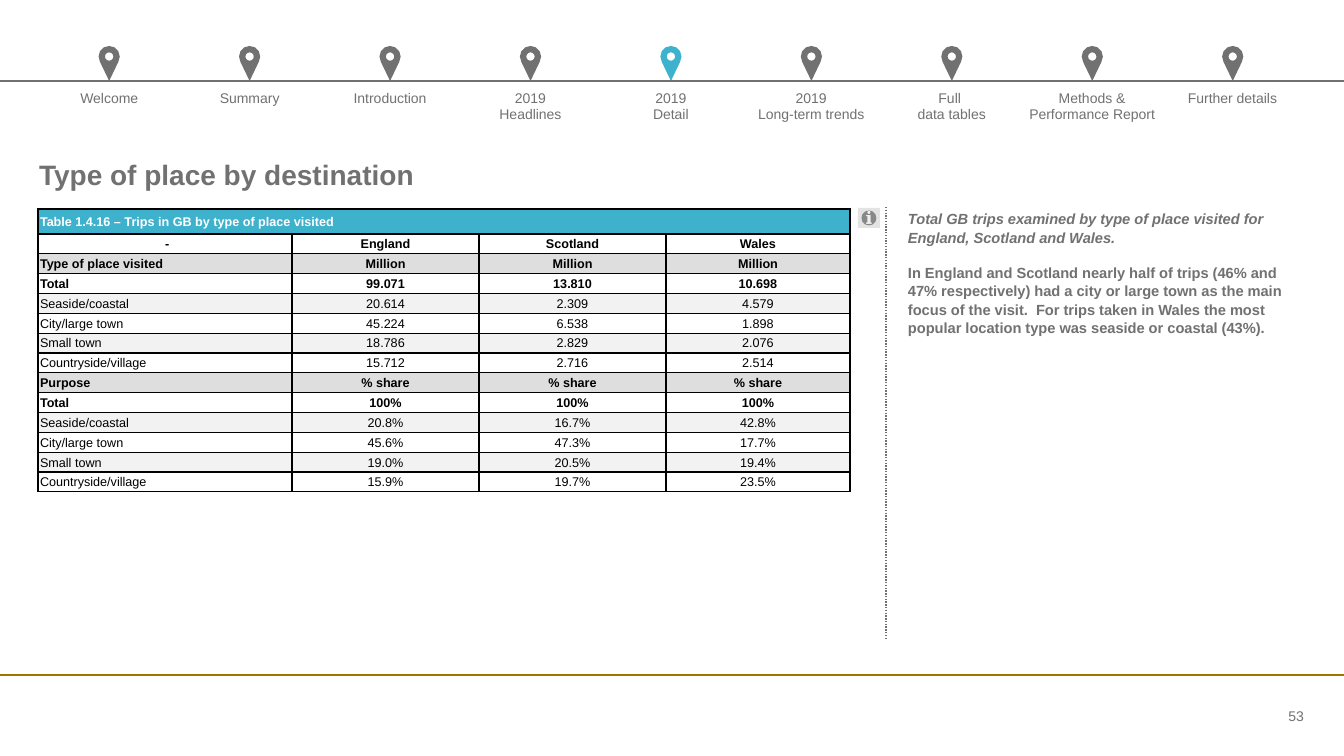
from math import cos, radians, sin

from lxml.etree import SubElement
from pptx import Presentation
from pptx.dml.color import RGBColor
from pptx.enum.dml import MSO_LINE
from pptx.enum.shapes import MSO_CONNECTOR, MSO_SHAPE
from pptx.enum.text import MSO_ANCHOR as ANCHOR, PP_ALIGN as ALIGN
from pptx.oxml.ns import qn
from pptx.util import Emu, Pt

PX_PER_INCH = 100.8
FONT = "Arial"
NO_GRID_STYLE = "{2D5ABB26-0587-4C30-8999-92F81FD0307C}"
GREY = RGBColor(0x71, 0x71, 0x71)
TEAL = RGBColor(0x3E, 0xB1, 0xCC)
GOLD = RGBColor(0x9E, 0x75, 0x00)
BLACK = RGBColor(0x00, 0x00, 0x00)
WHITE = RGBColor(0xFF, 0xFF, 0xFF)
HEADING_FILL = RGBColor(0xDE, 0xDE, 0xDE)
BAND_FILL = RGBColor(0xF2, 0xF2, 0xF2)
BUTTON_FILL = RGBColor(0xE3, 0xE3, 0xE3)

SECTIONS = ["Welcome", "Summary", "Introduction", "2019\nHeadlines", "2019\nDetail",
            "2019\nLong-term trends", "Full \vdata tables",
            "Methods & Performance Report", "Further details"]
CURRENT_SECTION = 4

TABLE_TITLE = "Table 1.4.16 – Trips in GB by type of place visited"
TABLE_ROWS = [
    (" -", "England", "Scotland", "Wales"),
    ("Type of place visited", "Million", "Million", "Million"),
    ("Total", "99.071", "13.810", "10.698"),
    ("Seaside/coastal", "20.614", "2.309", "4.579"),
    ("City/large town", "45.224", "6.538", "1.898"),
    ("Small town", "18.786", "2.829", "2.076"),
    ("Countryside/village", "15.712", "2.716", "2.514"),
    ("Purpose", "% share", "% share", "% share"),
    ("Total", "100%", "100%", "100%"),
    ("Seaside/coastal", "20.8%", "16.7%", "42.8%"),
    ("City/large town", "45.6%", "47.3%", "17.7%"),
    ("Small town", "19.0%", "20.5%", "19.4%"),
    ("Countryside/village", "15.9%", "19.7%", "23.5%"),
]
HEADINGS = {"Type of place visited", "Purpose"}
BANDED = {"Seaside/coastal", "Small town"}
BOLD = HEADINGS | {"Total", TABLE_ROWS[0][0]}

COMMENTARY = [
    "Total GB trips examined by type of place visited for England, Scotland and Wales.",
    "In England and Scotland nearly half of trips (46% and 47% respectively) had a city or "
    "large town as the main focus of the visit.  For trips taken in Wales the most popular "
    "location type was seaside or coastal (43%).",
]


def px(length):
    """Turn a length in px into EMU."""
    return Emu(round(length * 914400 / PX_PER_INCH))


def format_text(text_frame, size, color, bold=False, align=ALIGN.LEFT):
    """Format every run in a text frame."""
    for paragraph in text_frame.paragraphs:
        paragraph.alignment = align
        for run in paragraph.runs:
            run.font.name, run.font.size = FONT, Pt(size)
            run.font.bold, run.font.color.rgb = bold, color


def clear_margins(text_frame, anchor):
    """Wrap the text, remove its margins and anchor it."""
    text_frame.word_wrap = True
    text_frame.margin_left = text_frame.margin_right = 0
    text_frame.margin_top = text_frame.margin_bottom = 0
    text_frame.vertical_anchor = anchor


def add_line(slide, start, end, color, width, dash=None):
    """Draw a straight line between two points."""
    line = slide.shapes.add_connector(MSO_CONNECTOR.STRAIGHT, *map(px, start + end))
    line.line.color.rgb, line.line.width = color, Pt(width)
    if dash:
        line.line.dash_style = dash
    SubElement(line._element.spPr, qn("a:effectLst"))


def arc(center_x, center_y, radius, first, last):
    """List the points of an arc in EMU, with angles in degrees."""
    return [(px(center_x + radius * cos(radians(angle))),
             px(center_y + radius * sin(radians(angle))))
            for angle in range(first, last + 1, 30)]


def add_pin(slide, center_x, top, color):
    """Draw a map pin with a round hole."""
    outline = arc(center_x, top + 10.6, 10.6, -210, 30) + [(px(center_x), px(top + 35))]
    hole = arc(center_x, top + 10.6, 4.2, 0, 330)
    builder = slide.shapes.build_freeform(*outline[0])
    builder.add_line_segments(outline[1:])
    builder.move_to(*hole[0])
    builder.add_line_segments(hole[1:])
    pin = builder.convert_to_shape()
    pin.shadow.inherit = False
    pin.fill.solid()
    pin.fill.fore_color.rgb = color
    pin.line.fill.background()


def add_plain_table(slide, rows, columns, box):
    """Add a table without banding, a header row or a grid."""
    table = slide.shapes.add_table(rows, columns, *map(px, box)).table
    table.first_row = table.horz_banding = False
    table._tbl.tblPr.find(qn("a:tableStyleId")).text = NO_GRID_STYLE
    return table


def format_cell(cell, fill, margin):
    """Set the fill and margins of a cell."""
    if fill is None:
        cell.fill.background()
    else:
        cell.fill.solid()
        cell.fill.fore_color.rgb = fill
    cell.margin_left, cell.margin_right, cell.margin_top = map(px, margin)
    cell.margin_bottom = 0


def add_borders(cell, sides):
    """Draw a thin black line on the given sides of a cell."""
    properties = cell._tc.get_or_add_tcPr()
    for side in sides:
        line = SubElement(properties, qn(f"a:{side}"), w=str(Pt(1)))
        SubElement(SubElement(line, qn("a:solidFill")), qn("a:srgbClr"), val=str(BLACK))


def add_navigation(slide, left, top, width, height):
    """Draw the timeline of sections with pins and labels."""
    step = width / len(SECTIONS)
    labels = add_plain_table(slide, 1, len(SECTIONS), (left, top + 45, width, height - 45))
    for index, section in enumerate(SECTIONS):
        labels.columns[index].width = px(step)
        cell = labels.cell(0, index)
        format_cell(cell, None, (0, 0, 0))
        cell.text_frame.text = section
        format_text(cell.text_frame, 10, GREY, align=ALIGN.CENTER)
        color = TEAL if index == CURRENT_SECTION else GREY
        add_pin(slide, left + step * (index + 0.5), top, color)
    add_line(slide, (0, top + 35), (1344, top + 35), GREY, 1.25)


def add_title(slide, left, top, width, height):
    """Place the slide title."""
    title = slide.shapes.title
    title.left, title.top, title.width, title.height = map(px, (left, top, width, height))
    title.text_frame.text = "Type of place by destination"
    clear_margins(title.text_frame, ANCHOR.BOTTOM)
    format_text(title.text_frame, 20, GREY, bold=True)


def add_trips_table(slide, left, top, width, height):
    """Draw the table of trips by type of place."""
    table = add_plain_table(slide, len(TABLE_ROWS) + 1, 4, (left, top, width, height))
    for column, column_width in zip(table.columns, (254, 187, 187, width - 628)):
        column.width = px(column_width)
    for row in table.rows:
        row.height = px((height - 25) / len(TABLE_ROWS))
    table.rows[0].height = px(25)
    table.cell(0, 0).merge(table.cell(0, 3))
    for row_index, values in enumerate([(TABLE_TITLE, "", "", "")] + TABLE_ROWS):
        name = values[0]
        is_title = row_index == 0
        fill = (TEAL if is_title else HEADING_FILL if name in HEADINGS
                else BAND_FILL if name in BANDED else None)
        for column_index, value in enumerate(values):
            cell = table.cell(row_index, column_index)
            first_sides = ["lnL"] if column_index == 0 else []
            top_sides = ["lnT"] if is_title else []
            add_borders(cell, first_sides + ["lnR"] + top_sides + ["lnB"])
            format_cell(cell, fill, (1 if column_index else 2, 1, 1))
            cell.vertical_anchor = ANCHOR.MIDDLE
            if value:
                cell.text_frame.text = value
            centered = column_index > 0 or row_index == 1
            format_text(cell.text_frame, 9, WHITE if is_title else BLACK,
                        bold=is_title or name in BOLD,
                        align=ALIGN.CENTER if centered else ALIGN.LEFT)


def add_info_button(slide, left, top, width, height):
    """Draw the information button beside the table."""
    button = slide.shapes.add_shape(MSO_SHAPE.ACTION_BUTTON_INFORMATION,
                                    *map(px, (left, top, width, height)))
    button.shadow.inherit = False
    button.fill.solid()
    button.fill.fore_color.rgb = BUTTON_FILL
    button.line.fill.background()


def add_commentary(slide, left, top, width, height):
    """Place the commentary with a dotted rule on its left."""
    text_frame = slide.shapes.add_textbox(*map(px, (left, top, width, height))).text_frame
    text_frame.text = "\n".join(COMMENTARY)
    clear_margins(text_frame, ANCHOR.TOP)
    format_text(text_frame, 10.5, GREY, bold=True)
    for paragraph in text_frame.paragraphs:
        paragraph.line_spacing = 1.05
    summary, detail = text_frame.paragraphs
    summary.runs[0].font.italic = True
    detail.space_before = Pt(12)
    add_line(slide, (left - 22, top - 2), (left - 22, top + 431), GREY, 1, MSO_LINE.ROUND_DOT)


def add_footer(slide, left, top, width, height):
    """Draw the footer rule and the page number."""
    add_line(slide, (0, top - 30), (1344, top - 30), GOLD, 1.5)
    text_frame = slide.shapes.add_textbox(*map(px, (left, top, width, height))).text_frame
    text_frame.text = "53"
    clear_margins(text_frame, ANCHOR.MIDDLE)
    format_text(text_frame, 10, GREY, align=ALIGN.RIGHT)


def main():
    """Build the slide and save it."""
    presentation = Presentation()
    presentation.slide_width, presentation.slide_height = px(1344), px(756)
    slide = presentation.slides.add_slide(presentation.slide_layouts[5])
    add_navigation(slide, 39, 46, 1264, 80)
    add_title(slide, 39, 156, 1262, 35)
    add_trips_table(slide, 38, 209, 812, 283)
    add_info_button(slide, 858, 208, 22, 20)
    add_commentary(slide, 908, 209, 396, 421)
    add_footer(slide, 1197, 705, 107, 22)
    presentation.save("out.pptx")


if __name__ == "__main__":
    main()
